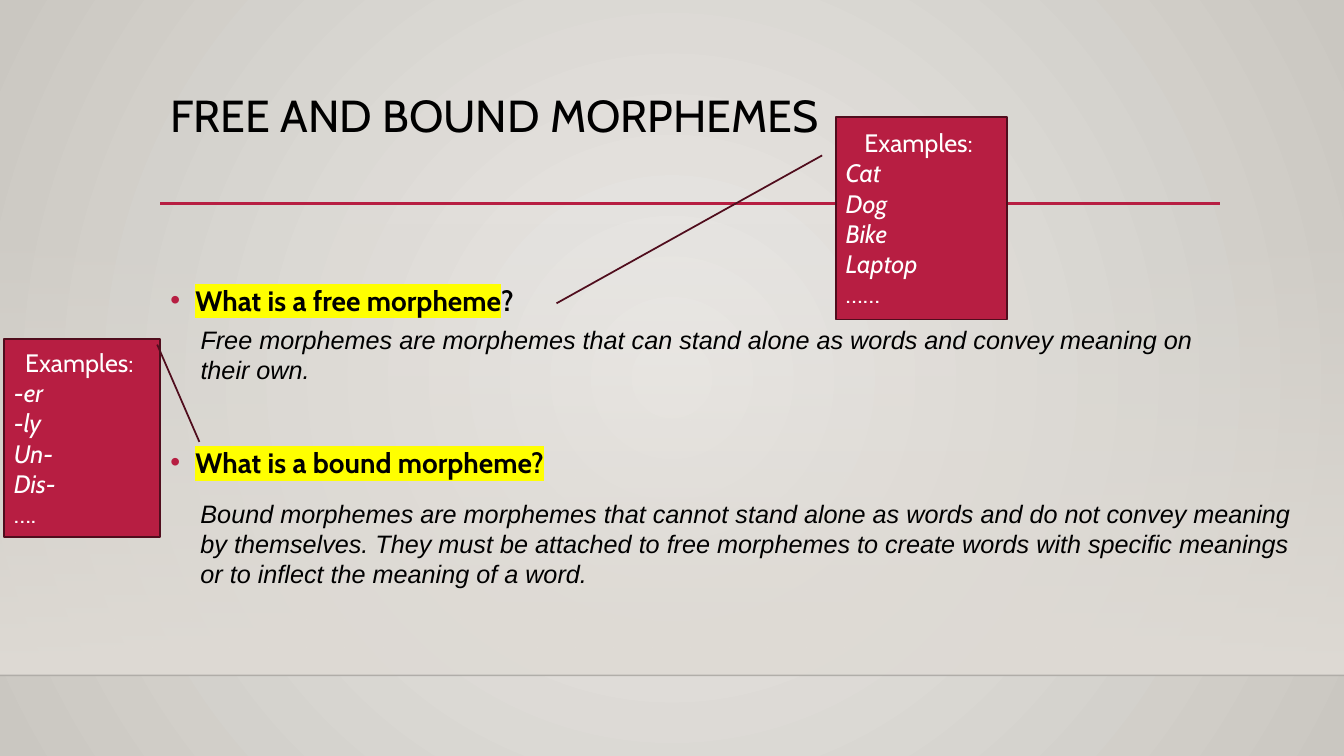
from dataclasses import dataclass
from pptx import Presentation
from pptx.dml.color import RGBColor as Rgb
from pptx.enum.shapes import MSO_CONNECTOR as Link, MSO_SHAPE as Kind
from pptx.enum.text import MSO_ANCHOR as Anchor, PP_ALIGN as Align
from pptx.oxml.ns import qn
from pptx.oxml.xmlchemy import OxmlElement as Tag
from pptx.util import Inches, Pt

HUES = {"pale": "ECEAE7", "stone": "CAC7C1", "sand": "DFDBD5", "red": "B71E42",
        "wine": "500D1D", "black": "000000", "white": "FFFFFF", "mark": "FFFF00"}
WIDE, HIGH = Inches(13.33), Inches(7.5)
LEFT, RIGHT, FLOOR = 11.93, 90.77, 89.33


@dataclass
class Box:
    x: float
    y: float
    w: float
    h: float

    def emu(self) -> tuple:
        return (*spot(self.x, self.y), *spot(self.w, self.h))


@dataclass
class Rule:
    x1: float
    x2: float
    y: float
    hue: str
    size: float
    alpha: int


@dataclass
class Topic:
    box: Box
    ask: str
    tail: str
    area: Box
    reply: str


@dataclass
class Callout:
    box: Box
    bends: tuple
    words: tuple


RULES = (Rule(0, 100, FLOOR, "black", 1, 20), Rule(LEFT, RIGHT, 26.93, "red", 2.5, 100))
TOPICS = (
    Topic(Box(LEFT, 36.8, 33.46, 6), "What is a free morpheme", "?",
          Box(14.18, 42.27, 77.72, 9.33),
          "Free morphemes are morphemes that can stand alone as words and convey "
          "meaning on their own."),
    Topic(Box(LEFT, 58.27, 33.46, 6), "What is a bound morpheme?", "",
          Box(14.18, 65.2, 84.17, 13.47),
          "Bound morphemes are morphemes that cannot stand alone as words and do not "
          "convey meaning by themselves. They must be attached to free morphemes to "
          "create words with specific meanings or to inflect the meaning of a word."),
)
CALLOUTS = (
    Callout(Box(62.19, 15.47, 12.75, 26.8), (0.19, -0.08, 0.92, -1.63),
            ("Cat", "Dog", "Bike", "Laptop", "……")),
    Callout(Box(0.3, 44.8, 11.63, 26.27), (0.03, 0.98, 0.52, 1.25),
            ("-er", "-ly", "Un-", "Dis-", "….")),
)


def spot(x: float, y: float) -> tuple:
    return round(WIDE * x / 100), round(HIGH * y / 100)


def tint(name: str) -> Rgb:
    return Rgb.from_string(HUES[name])


def node(host, name: str, **attrs):
    item = Tag(name)
    for key, value in attrs.items():
        item.set(key, str(value))
    host.append(item)
    return item


def fade(fill, first: str, last: str) -> None:
    fill.gradient()
    for stop, name in zip(fill.gradient_stops, (first, last)):
        stop.color.rgb = tint(name)


def style(para, face: str, size: int, hue: str, bold=False, slant=False) -> None:
    font = para.font
    font.name, font.size = face, Pt(size)
    font.bold, font.italic = bold, slant
    font.color.rgb = tint(hue)


def write(slide, box: Box, text: str):
    frame = slide.shapes.add_textbox(*box.emu()).text_frame
    frame.word_wrap = True
    para = frame.paragraphs[0]
    if text:
        para.add_run().text = text
    return para


def paint(slide) -> None:
    fade(slide.background.fill, "pale", "stone")
    grad = slide.element.find(".//" + qn("a:gradFill"))
    grad.remove(grad.find(qn("a:lin")))
    ring = node(grad, "a:path", path="circle")
    node(ring, "a:fillToRect", l=50000, t=50000, r=50000, b=50000)
    wall = slide.shapes.add_shape(Kind.RECTANGLE, *Box(0, 29.47, 100, 59.87).emu())
    wall.shadow.inherit = False
    wall.line.fill.background()
    fade(wall.fill, "sand", "sand")
    wall.fill.gradient_angle = 270
    node(wall.element.find(".//" + qn("a:srgbClr")), "a:alpha", val=0)


def rule(slide, item: Rule) -> None:
    ends = (*spot(item.x1, item.y), *spot(item.x2, item.y))
    line = slide.shapes.add_connector(Link.STRAIGHT, *ends)
    line.line.width = Pt(item.size)
    line.line.color.rgb = tint(item.hue)
    if item.alpha < 100:
        node(line.element.find(".//" + qn("a:srgbClr")), "a:alpha", val=item.alpha * 1000)
    node(line.element.spPr, "a:effectLst")


def topic(slide, item: Topic) -> None:
    para = write(slide, item.box, item.ask)
    mark = node(para.runs[0].font._element, "a:highlight")
    node(mark, "a:srgbClr", val=HUES["mark"])
    if item.tail:
        para.add_run().text = item.tail
    props = para._p.get_or_add_pPr()
    props.set("marL", str(Inches(0.25)))
    props.set("indent", str(-Inches(0.25)))
    node(node(props, "a:buClr"), "a:srgbClr", val=HUES["red"])
    node(props, "a:buFont", typeface="Arial")
    node(props, "a:buChar", char="•")
    style(para, "Cabin", 20, "black", bold=True)
    style(write(slide, item.area, item.reply), "Arial", 18, "black", slant=True)


def callout(slide, item: Callout) -> None:
    shape = slide.shapes.add_shape(Kind.LINE_CALLOUT_1, *item.box.emu())
    shape.shadow.inherit = False
    for index, bend in enumerate(item.bends):
        shape.adjustments[index] = bend
    shape.fill.solid()
    shape.fill.fore_color.rgb = tint("red")
    shape.line.color.rgb = tint("wine")
    shape.line.width = Pt(1.25)
    frame = shape.text_frame
    frame.word_wrap = True
    frame.vertical_anchor = Anchor.MIDDLE
    lines = ("Examples: ", *item.words)
    frame.text = "\n".join(lines)
    for index, para in enumerate(frame.paragraphs):
        para.alignment = Align.LEFT if index else Align.CENTER
        style(para, "Cabin", 18, "white", slant=0 < index < len(lines) - 1)


def main() -> None:
    deck = Presentation()
    deck.slide_width, deck.slide_height = WIDE, HIGH
    slide = deck.slides.add_slide(deck.slide_layouts[6])
    paint(slide)
    for item in RULES:
        rule(slide, item)
    title = write(slide, Box(LEFT, 11.73, 51.01, 13.2), "FREE AND BOUND MORPHEMES")
    title.line_spacing = 0.9
    style(title, "Cabin", 32, "black")
    for item in TOPICS:
        topic(slide, item)
    for item in CALLOUTS:
        callout(slide, item)
    deck.save("out.pptx")


if __name__ == "__main__":
    main()
